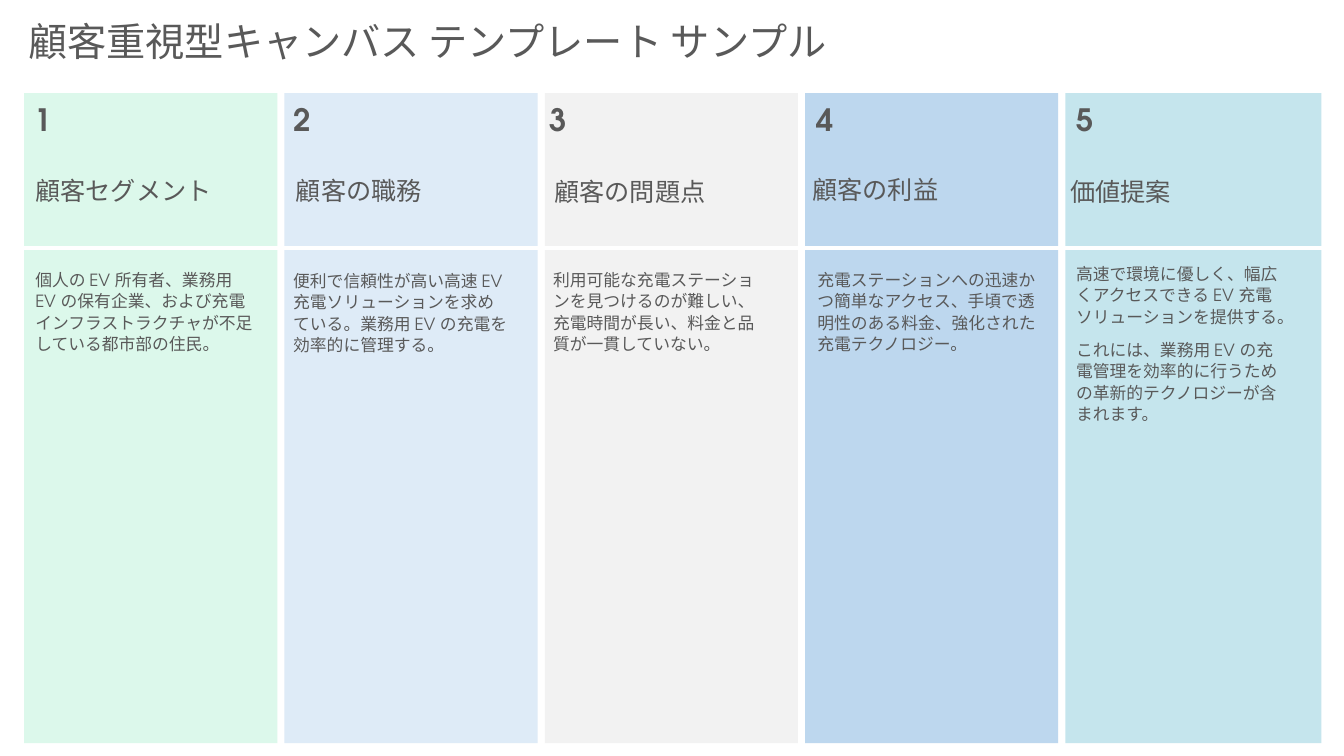
from lxml import etree
from pptx import Presentation
from pptx.dml.color import RGBColor
from pptx.enum import shapes, text
from pptx.oxml.ns import qn
from pptx.util import Cm, Pt

TITLE = "顧客重視型キャンバス テンプレート サンプル"
FONT = "TeX Gyre Adventor"
COLORS = {
    "text": "595959",
    "rule": "FFFFFF",
    "segment": "DCF8EB",
    "jobs": "DEEBF7",
    "pains": "F2F2F2",
    "gains": "BDD7EE",
    "value": "C5E5ED",
}

# Each place is (left, top) in cm; the body also has a width.
COLUMNS = [
    {"color": "segment", "heading": "顧客セグメント",
     "body": ["個人の EV 所有者、業務用 EV の保有企業、および充電インフラストラクチャが不足している都市部の住民。"],
     "number_at": (0.61, 2.36), "heading_at": (0.64, 4.29), "body_at": (0.64, 6.63, 6.05)},
    {"color": "jobs", "heading": "顧客の職務",
     "body": ["便利で信頼性が高い高速 EV 充電ソリューションを求めている。業務用 EV の充電を効率的に管理する。"],
     "number_at": (7.16, 2.36), "heading_at": (7.21, 4.29), "body_at": (7.14, 6.65, 5.97)},
    {"color": "pains", "heading": "顧客の問題点",
     "body": ["利用可能な充電ステーションを見つけるのが難しい、充電時間が長い、料金と品質が一貫していない。"],
     "number_at": (13.61, 2.34), "heading_at": (13.72, 4.32), "body_at": (13.69, 6.63, 5.97)},
    {"color": "gains", "heading": "顧客の利益",
     "body": ["充電ステーションへの迅速かつ簡単なアクセス、手頃で透明性のある料金、強化された充電テクノロジー。"],
     "number_at": (20.32, 2.34), "heading_at": (20.22, 4.27), "body_at": (20.35, 6.63, 6.05)},
    {"color": "value", "heading": "価値提案",
     "body": ["高速で環境に優しく、幅広くアクセスできる EV 充電ソリューションを提供する。",
              "これには、業務用 EV の充電管理を効率的に行うための革新的テクノロジーが含まれます。"],
     "number_at": (26.87, 2.34), "heading_at": (26.72, 4.32), "body_at": (26.87, 6.48, 5.72)},
]

COLUMN_LEFT, COLUMN_TOP, COLUMN_PITCH = 0.61, 2.35, 6.56
COLUMN_WIDTH, LAST_WIDTH, COLUMN_HEIGHT = 6.38, 6.45, 16.38
RULE_RIGHT, RULE_TOP = 33.53, 6.25


def rgb(name):
    return RGBColor.from_string(COLORS[name])


def add_run(paragraph, words, size, bold=False):
    run = paragraph.add_run()
    run.text = words
    run.font.name = FONT
    run.font.size = Pt(size)
    run.font.bold = bold
    run.font.color.rgb = rgb("text")


def add_label(slide, box, paragraphs, size, bold=False, spaced=True):
    """Add a wrapped text box; spaced gives the looser lines of running text."""
    frame = slide.shapes.add_textbox(*map(Cm, box)).text_frame
    frame.word_wrap = True
    for i, words in enumerate(paragraphs):
        paragraph = frame.add_paragraph() if i else frame.paragraphs[0]
        if spaced:
            paragraph.line_spacing = 1.07
            paragraph.space_after = Pt(8)
        add_run(paragraph, words, size, bold)


def add_title(slide):
    title = slide.shapes.title
    title.left, title.top, title.width, title.height = map(Cm, (0.46, 0.3, 32.89, 1.45))
    frame = title.text_frame
    frame.auto_size = text.MSO_AUTO_SIZE.NONE
    frame.vertical_anchor = text.MSO_ANCHOR.MIDDLE
    frame.paragraphs[0].alignment = text.PP_ALIGN.LEFT
    add_run(frame.paragraphs[0], TITLE, 28)


def add_panel(slide, index, color):
    width = LAST_WIDTH if index == len(COLUMNS) - 1 else COLUMN_WIDTH
    left = COLUMN_LEFT + index * COLUMN_PITCH
    panel = slide.shapes.add_shape(
        shapes.MSO_SHAPE.RECTANGLE, Cm(left), Cm(COLUMN_TOP), Cm(width), Cm(COLUMN_HEIGHT))
    panel.shadow.inherit = False
    panel.fill.solid()
    panel.fill.fore_color.rgb = rgb(color)
    panel.line.fill.background()


def add_rule(slide):
    rule = slide.shapes.add_connector(
        shapes.MSO_CONNECTOR.STRAIGHT,
        Cm(COLUMN_LEFT), Cm(RULE_TOP), Cm(RULE_RIGHT), Cm(RULE_TOP))
    rule.line.color.rgb = rgb("rule")
    rule.line.width = Pt(2.25)
    etree.SubElement(rule._element.spPr, qn("a:effectLst"))


def main():
    deck = Presentation()
    deck.slide_width, deck.slide_height = Cm(33.87), Cm(19.05)
    slide = deck.slides.add_slide(deck.slide_layouts[5])
    add_title(slide)
    for i, column in enumerate(COLUMNS):
        add_panel(slide, i, column["color"])
    add_rule(slide)
    for number, column in enumerate(COLUMNS, start=1):
        add_label(slide, (*column["number_at"], 1.17, 1.63), [str(number)], 22, bold=True)
        add_label(slide, (*column["heading_at"], 6.35, 1.02), [column["heading"]], 18, spaced=False)
        add_label(slide, (*column["body_at"], 4), column["body"], 12)
    deck.save("out.pptx")


if __name__ == "__main__":
    main()
